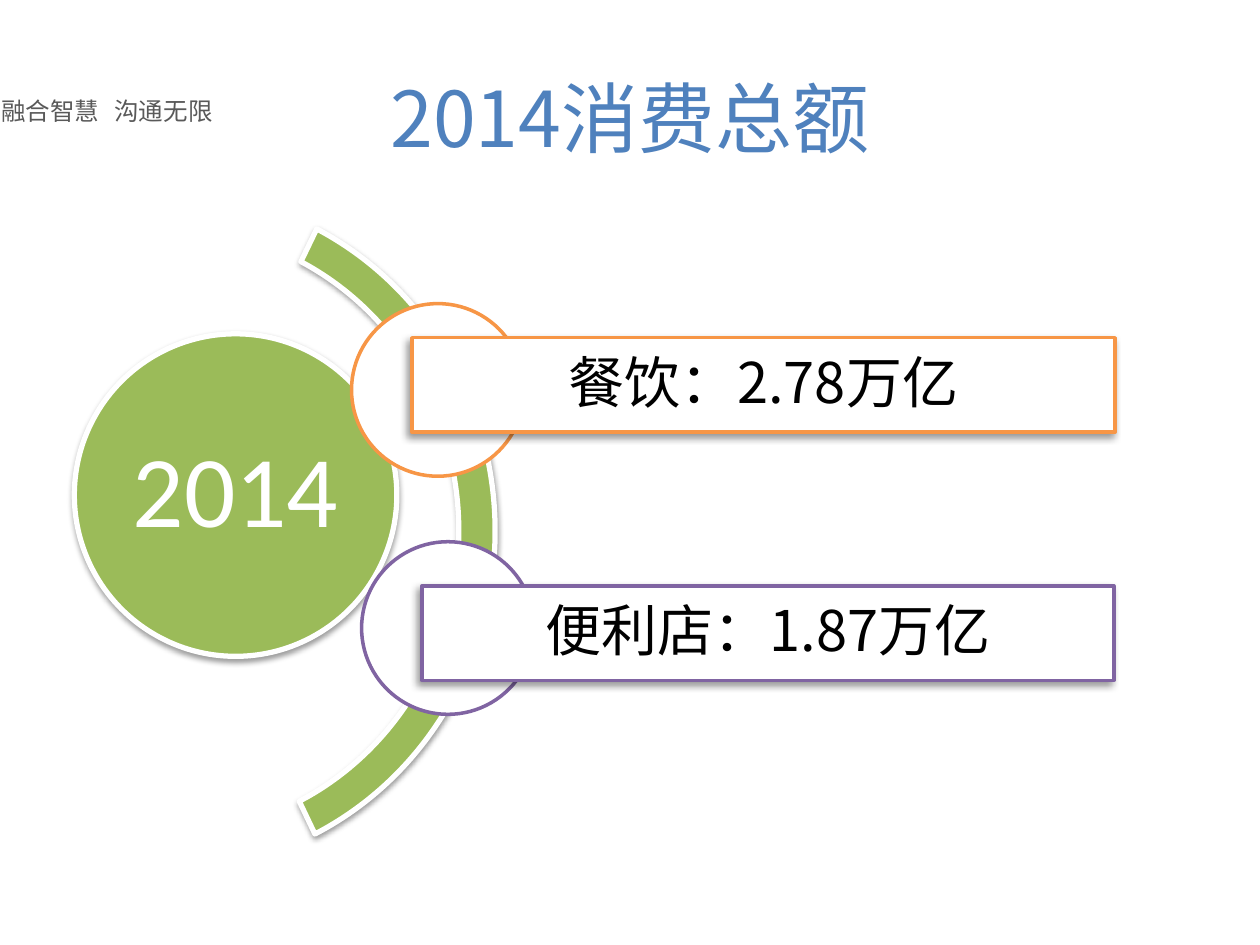
import pptx
import pptx.util
import pptx.dml.color
import pptx.enum.shapes
import pptx.enum.text
import lxml.etree

RGBColor = pptx.dml.color.RGBColor
Pt = pptx.util.Pt
SHAPE = pptx.enum.shapes.MSO_SHAPE
ALIGN = pptx.enum.text.PP_ALIGN
ANCHOR = pptx.enum.text.MSO_ANCHOR

WHITE = RGBColor(0xFF, 0xFF, 0xFF)
BLACK = RGBColor(0x00, 0x00, 0x00)
GRAY = RGBColor(0x59, 0x59, 0x59)
BLUE = RGBColor(0x4F, 0x81, 0xBD)
GREEN = RGBColor(0x9B, 0xBB, 0x59)
ORANGE = RGBColor(0xF7, 0x96, 0x46)
PURPLE = RGBColor(0x80, 0x64, 0xA2)
CJK = "Noto Sans CJK SC"
DRAWING = "http://schemas.openxmlformats.org/drawingml/2006/main"

deck = pptx.Presentation()
deck.slide_width = pptx.util.Inches(10)
deck.slide_height = pptx.util.Inches(7.5)
page = deck.slides.add_slide(deck.slide_layouts[5])


def share(left, top, width, height):
    across, down = deck.slide_width / 100, deck.slide_height / 100
    return [round(left * across), round(top * down), round(width * across), round(height * down)]


def write(box, text, size, name, color, align=ALIGN.CENTER):
    box.text_frame.text = text
    para = box.text_frame.paragraphs[0]
    para.alignment = align
    for span in para.runs:
        span.font.size = Pt(size)
        span.font.name = name
        span.font.color.rgb = color
        latin = span.font._element.find(f"{{{DRAWING}}}latin")
        asian = lxml.etree.Element(f"{{{DRAWING}}}ea", typeface=name)
        latin.addnext(asian)
    return para


tagline = page.shapes.add_textbox(*share(-0.9, 9.47, 21.1, 4.53))
tagline.text_frame.word_wrap = True
para = write(tagline, "融合智慧\t沟通无限", 14, "Noto Sans CJK JP", GRAY, ALIGN.LEFT)
tabs = lxml.etree.SubElement(para._p.get_or_add_pPr(), f"{{{DRAWING}}}tabLst")
lxml.etree.SubElement(tabs, f"{{{DRAWING}}}tab", pos=str(pptx.util.Inches(0.9)), algn="l")

title = page.shapes.title
title.left, title.top, title.width, title.height = share(5, 4, 90, 16.67)
write(title, "2014消费总额", 44, CJK, BLUE)

soft = (38, 3.1, 1.6, 90)
deep = (40, 4, 3, 135)
pieces = [
    (SHAPE.OVAL, (5.9, 35.33, 25.6, 34.13), GREEN, WHITE, 3, soft, "2014", 58, "Calibri", WHITE),
    (SHAPE.BLOCK_ARC, (-12.2, 20.4, 51.5, 71.6), GREEN, WHITE, 3, soft, "", 0, CJK, BLACK),
]
items = [
    ("餐饮：2.78万亿", ORANGE, (27.9, 32.13), (32.7, 35.73, 55.8, 10)),
    ("便利店：1.87万亿", PURPLE, (28.7, 57.33), (33.5, 62, 54.9, 10)),
]
for label, color, corner, bar in items:
    pieces.append((SHAPE.OVAL, (*corner, 13.7, 18.27), WHITE, color, 2, None, "", 0, CJK, BLACK))
    pieces.append((SHAPE.RECTANGLE, bar, WHITE, color, 2, deep, label, 32, CJK, BLACK))

for kind, place, fill, edge, weight, shadow, label, size, name, ink in pieces:
    box = page.shapes.add_shape(kind, *share(*place))
    box.fill.solid()
    box.fill.fore_color.rgb = fill
    box.line.color.rgb = edge
    box.line.width = Pt(weight)
    box.shadow.inherit = False
    if kind == SHAPE.BLOCK_ARC:
        for index, value in enumerate((295.8 * 0.6, 64.55 * 0.6, 0.056)):
            box.adjustments[index] = value
    if shadow:
        alpha, blur, distance, angle = shadow
        effects = box._element.spPr.find(f"{{{DRAWING}}}effectLst")
        outer = lxml.etree.SubElement(
            effects, f"{{{DRAWING}}}outerShdw", blurRad=str(Pt(blur)), dist=str(Pt(distance)),
            dir=str(angle * 60000), algn="ctr", rotWithShape="0")
        shade = lxml.etree.SubElement(outer, f"{{{DRAWING}}}srgbClr", val=str(BLACK))
        lxml.etree.SubElement(shade, f"{{{DRAWING}}}alpha", val=str(alpha * 1000))
    if label:
        frame = box.text_frame
        frame.word_wrap = True
        frame.vertical_anchor = ANCHOR.MIDDLE
        frame.margin_left = frame.margin_right = pptx.util.Inches(0.04)
        frame.margin_top = frame.margin_bottom = pptx.util.Inches(0.04)
        write(box, label, size, name, ink).line_spacing = 0.9

deck.save("out.pptx")
